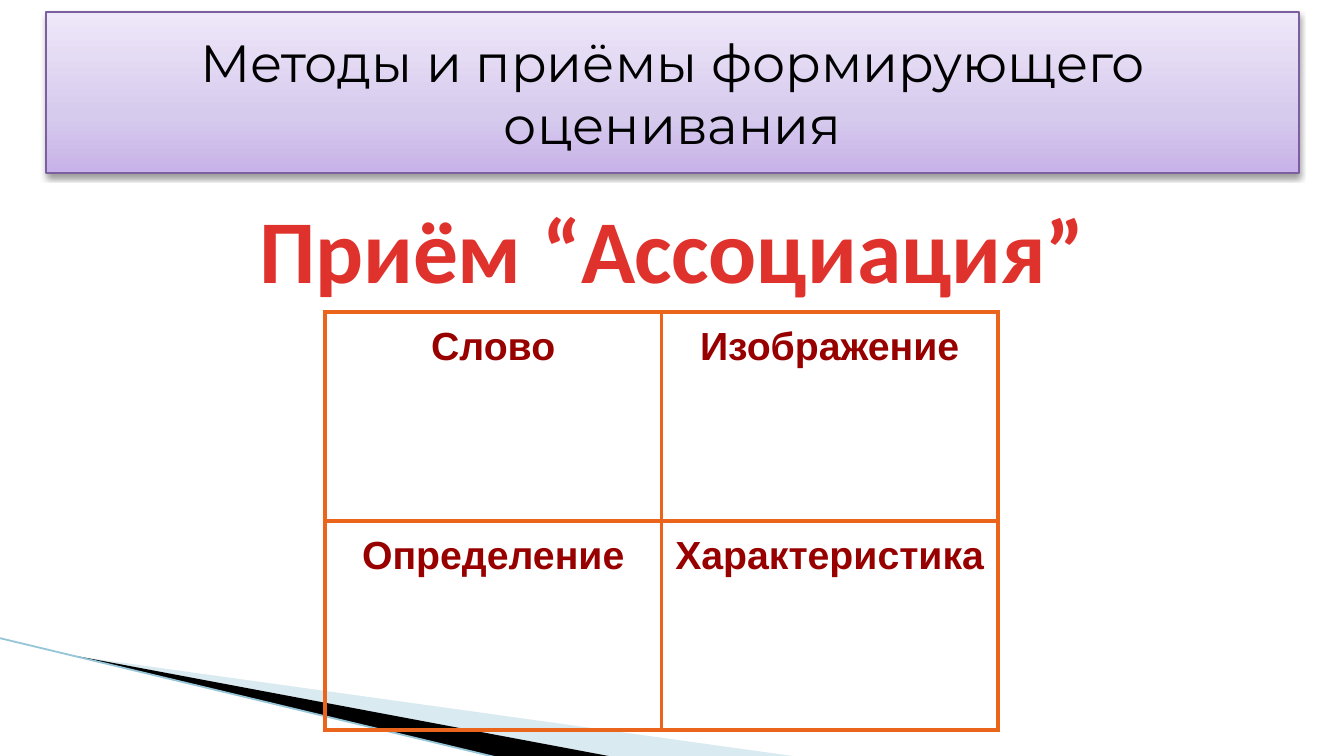
from copy import deepcopy
from dataclasses import dataclass

from lxml import etree
from pptx import Presentation
from pptx import util as u
from pptx.dml.color import RGBColor
from pptx.enum import shapes, text
from pptx.oxml import parse_xml
from pptx.oxml.ns import nsdecls, qn

SCALE = 914400 / 134.4  # EMU in one px


@dataclass(frozen=True)
class Theme:
    red: str = "DF322D"
    wine: str = "980000"
    rust: str = "EB641B"
    plum: str = "7C5F9F"
    black: str = "000000"
    pale: str = "A0CBDC"
    sky: str = "97C5D8"
    fade: tuple = ((0, "C8B2E9"), (0.35, "D6CAED"), (1, "EFE8FA"))
    head: int = 28
    lead: int = 48
    cell: int = 21


def px(*vals):
    return [u.Emu(round(v * SCALE)) for v in vals]


def rgb(code):
    return RGBColor.from_string(code)


def write(frame, words, *, size, font, color, bold=False, pad=13, side=13,
          anchor=text.MSO_ANCHOR.TOP):
    """Put one centred paragraph in a text frame."""
    frame.word_wrap = True
    frame.auto_size = text.MSO_AUTO_SIZE.NONE
    frame.vertical_anchor = anchor
    frame.margin_top, frame.margin_bottom = px(pad, pad)
    frame.margin_left, frame.margin_right = px(side, side)
    frame.text = words
    style(frame.paragraphs[0], size, font, color, bold)


def style(para, size, font, color, bold):
    props = para._p.get_or_add_pPr()
    props.set("marL", "0")
    props.set("indent", "0")
    etree.SubElement(props, qn("a:buNone"))
    para.alignment = text.PP_ALIGN.CENTER
    para.line_spacing = 1.0
    para.space_before = u.Pt(0)
    face = para.runs[0].font
    face.size, face.name, face.bold = u.Pt(size), font, bold
    face.color.rgb = rgb(color)


class Page:
    def __init__(self, deck, theme):
        self.theme = theme
        self.slide = deck.slides.add_slide(deck.slide_layouts[1])
        self.shapes = self.slide.shapes

    def place(self, item, box):
        item.left, item.top, item.width, item.height = px(*box)

    def wedge(self, points, color, alpha=None):
        build = self.shapes.build_freeform(*points[0], scale=SCALE)
        build.add_line_segments(points[1:], close=True)
        item = build.convert_to_shape()
        item.shadow.inherit = False
        item.fill.solid()
        item.fill.fore_color.rgb = rgb(color)
        item.line.fill.background()
        if alpha:
            tint = item._element.spPr.find(".//" + qn("a:srgbClr"))
            etree.SubElement(tint, qn("a:alpha"), val=str(alpha * 1000))
        self.sink(item)

    def line(self, start, end, color, width):
        item = self.shapes.add_connector(
            shapes.MSO_CONNECTOR.STRAIGHT, *px(*start, *end))
        item.line.color.rgb = rgb(color)
        item.line.width = u.Pt(width)
        etree.SubElement(item._element.spPr, qn("a:effectLst"))
        self.sink(item)

    def sink(self, item):
        """Move a backdrop part behind the body placeholder."""
        self.slide.placeholders[1]._element.addprevious(item._element)

    def title(self, words, box):
        item = self.shapes.title
        self.place(item, box)
        # Three-stop fade, rising from the bottom edge
        item.fill.gradient()
        item.fill.gradient_angle = 90
        stops = item._element.spPr.find(".//" + qn("a:gsLst"))
        stops.append(deepcopy(stops[-1]))
        for stop, (pos, color) in zip(item.fill.gradient_stops, self.theme.fade):
            stop.position, stop.color.rgb = pos, rgb(color)
        item.line.color.rgb = rgb(self.theme.plum)
        item.line.width = u.Pt(0.75)
        item._element.spPr.append(parse_xml(
            f'<a:effectLst {nsdecls("a")}><a:outerShdw blurRad="39370" '
            'dist="20320" dir="5400000" rotWithShape="0">'
            f'<a:srgbClr val="{self.theme.black}"><a:alpha val="38000"/>'
            '</a:srgbClr></a:outerShdw></a:effectLst>'))
        write(item.text_frame, words, size=self.theme.head, font="Montserrat",
              color=self.theme.black, pad=7, anchor=text.MSO_ANCHOR.MIDDLE)
        # The title stands in front of the body
        self.slide.placeholders[1]._element.addnext(item._element)

    def body(self, words, box):
        item = self.slide.placeholders[1]
        self.place(item, box)
        write(item.text_frame, words, size=self.theme.lead, font="Calibri",
              color=self.theme.red, bold=True)

    def table(self, rows, box):
        grid = self.shapes.add_table(len(rows), len(rows[0]), *px(*box)).table
        grid.first_row = grid.horz_banding = False
        for r, row in enumerate(rows):
            for c, words in enumerate(row):
                self.cell(grid.cell(r, c), words)

    def cell(self, cell, words):
        cell.fill.background()
        props = cell._tc.get_or_add_tcPr()
        for i, side in enumerate("LRTB"):
            props.insert(i, parse_xml(
                f'<a:ln{side} {nsdecls("a")} w="{u.Pt(2.25)}"><a:solidFill>'
                f'<a:srgbClr val="{self.theme.rust}"/></a:solidFill></a:ln{side}>'))
        cell.margin_left, cell.margin_right = px(13, 13)
        cell.margin_top, cell.margin_bottom = px(13, 13)
        cell.vertical_anchor = text.MSO_ANCHOR.TOP
        cell.text = words
        style(cell.text_frame.paragraphs[0], self.theme.cell, "Arial",
              self.theme.wine, True)


def main():
    deck = Presentation()
    deck.slide_width, deck.slide_height = px(1344, 756)
    theme = Theme()
    page = Page(deck, theme)

    # Corner backdrop
    page.wedge([(74, 656), (800, 757), (613, 757)], theme.pale, alpha=40)
    page.wedge([(71, 655), (614, 757), (500, 758), (73, 656)], theme.black)
    page.line((-1, 638), (499, 758), theme.sky, 0.95)

    # Heading and name of the method
    page.body("Приём “Ассоциация”", (46, 181, 1253, 491))
    page.title("Методы и приёмы формирующего оценивания", (46, 12, 1253, 161))

    # Four-part card
    page.table([["Слово", "Изображение"],
                ["Определение", "Характеристика"]], (325, 312, 673, 418))

    deck.save("out.pptx")


if __name__ == "__main__":
    main()
